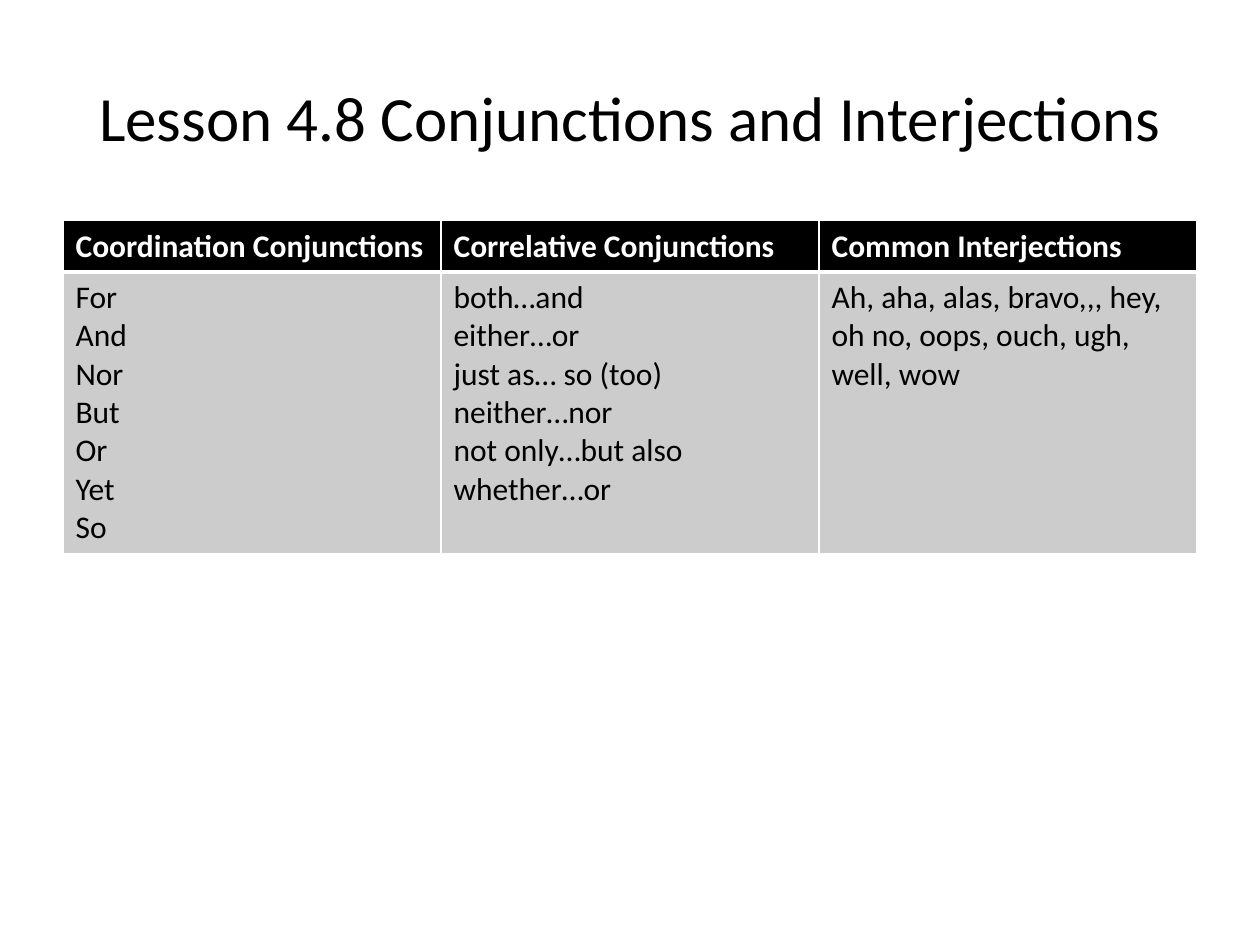
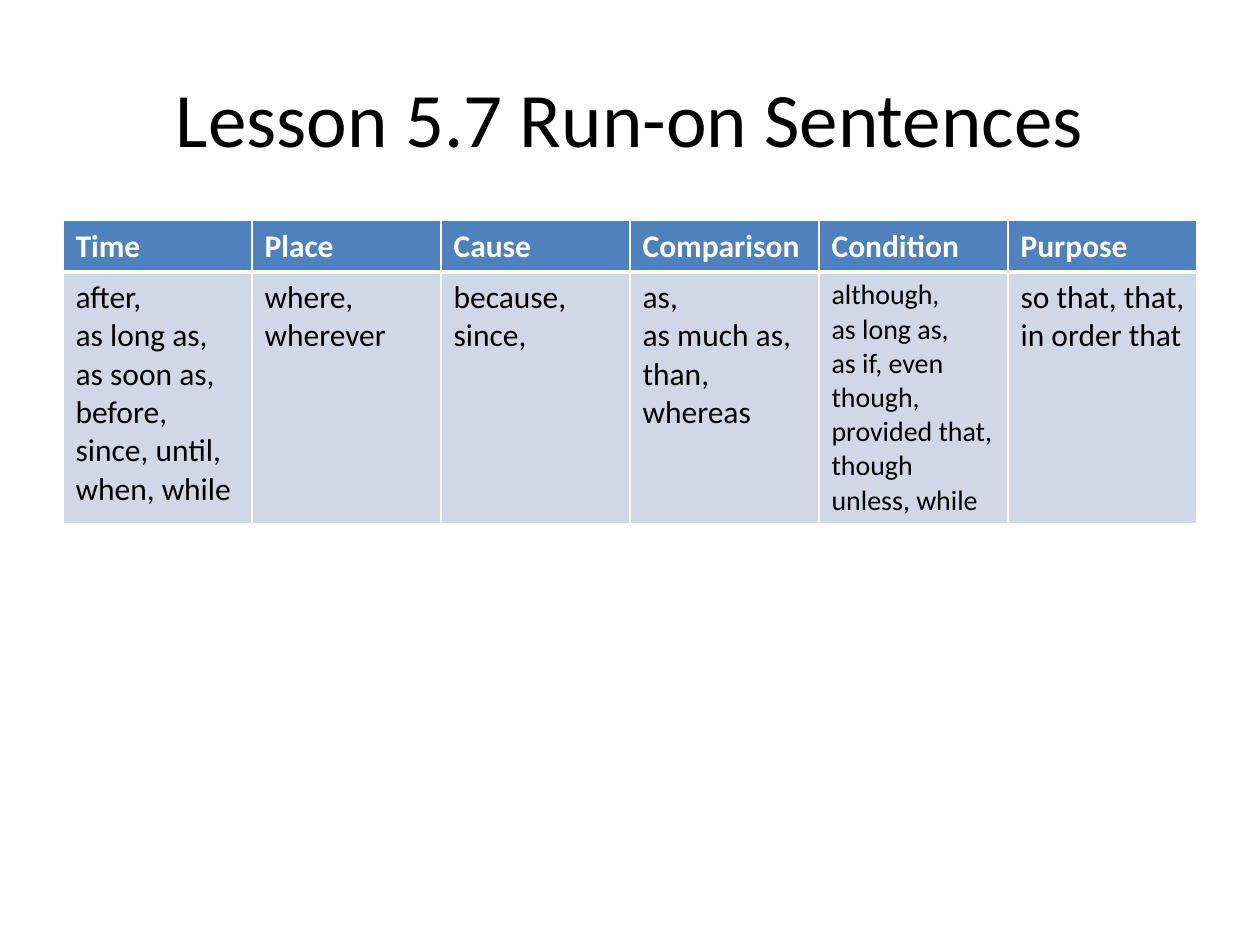
from dataclasses import dataclass

from lxml import etree
from pptx import Presentation
from pptx import util as u
from pptx.dml.color import RGBColor
from pptx.enum import text
from pptx.oxml import ns


@dataclass(frozen=True)
class Theme:
    font: str = "Calibri"
    ink: str = "000000"
    paper: str = "FFFFFF"
    black: str = "000000"
    grey: str = "CCCCCC"
    blue: str = "4F81BD"
    pale_blue: str = "D0D8E8"
    title_size: int = 44
    long_title_size: int = 36
    table_size: int = 18
    small_size: int = 16
    thin_rule: int = 1
    header_rule: int = 3


THEME = Theme()
TITLE_ONLY = 5
LEFT, WIDTH = u.Cm(1.27), u.Cm(22.86)
TITLE_TOP, TITLE_HEIGHT = u.Cm(0.76), u.Cm(3.18)
TABLE_TOP, HEADER_HEIGHT = u.Cm(4.45), u.Cm(1.03)

CONJUNCTIONS = {
    "Coordination Conjunctions": ["For", "And", "Nor", "But", "Or", "Yet", "So"],
    "Correlative Conjunctions": [
        "both…and", "either…or", "just as… so (too)",
        "neither…nor", "not only…but also", "whether…or",
    ],
    "Common Interjections": [
        "Ah, aha, alas, bravo,,, hey, oh no, oops, ouch, ugh, well, wow",
    ],
}
SUBORDINATORS = {
    "Time": ["after,", "as long as, as soon as, before, since, until, when, while"],
    "Place": ["where, wherever"],
    "Cause": ["because, since,"],
    "Comparison": ["as,", "as much as, than, whereas"],
    "Condition": [
        "although,", "as long as,",
        "as if, even though, provided that, though unless, while",
    ],
    "Purpose": ["so that, that,", "in order that"],
}


def add_run(paragraph, words, size, color, bold=False):
    run = paragraph.add_run()
    run.text = words
    run.font.name = THEME.font
    run.font.size = u.Pt(size)
    run.font.bold = bold
    run.font.color.rgb = RGBColor.from_string(color)


def set_borders(cell, top, bottom):
    """Draw white cell borders; top and bottom are widths in points."""
    properties = cell._tc.get_or_add_tcPr()
    widths = {"lnL": THEME.thin_rule, "lnR": THEME.thin_rule, "lnT": top, "lnB": bottom}
    for position, (edge, width) in enumerate(widths.items()):
        line = etree.Element(ns.qn(f"a:{edge}"), w=str(u.Pt(width)))
        fill = etree.SubElement(line, ns.qn("a:solidFill"))
        etree.SubElement(fill, ns.qn("a:srgbClr"), val=THEME.paper)
        properties.insert(position, line)


def fill_cell(cell, lines, fill, size, color, bold=False):
    cell.fill.solid()
    cell.fill.fore_color.rgb = RGBColor.from_string(fill)
    frame = cell.text_frame
    for index, line in enumerate(lines):
        paragraph = frame.add_paragraph() if index else frame.paragraphs[0]
        add_run(paragraph, line, size, color, bold)


def add_titled_slide(presentation, title, size):
    slide = presentation.slides.add_slide(presentation.slide_layouts[TITLE_ONLY])
    shape = slide.shapes.title
    shape.left, shape.top, shape.width, shape.height = LEFT, TITLE_TOP, WIDTH, TITLE_HEIGHT
    frame = shape.text_frame
    frame.auto_size = text.MSO_AUTO_SIZE.NONE
    frame.vertical_anchor = text.MSO_ANCHOR.MIDDLE
    paragraph = frame.paragraphs[0]
    paragraph.alignment = text.PP_ALIGN.CENTER
    add_run(paragraph, title, size, THEME.ink)
    return slide


def add_word_table(slide, columns, header_fill, body_fill, body_height, small=()):
    """Add one column per heading; headings in small get the smaller body type."""
    frame = slide.shapes.add_table(
        2, len(columns), LEFT, TABLE_TOP, WIDTH, HEADER_HEIGHT + body_height)
    table = frame.table
    table.horz_banding = False
    table.rows[0].height = HEADER_HEIGHT
    table.rows[1].height = body_height
    for index, (heading, lines) in enumerate(columns.items()):
        header, body = table.cell(0, index), table.cell(1, index)
        size = THEME.small_size if heading in small else THEME.table_size
        fill_cell(header, [heading], header_fill, THEME.table_size, THEME.paper, bold=True)
        fill_cell(body, lines, body_fill, size, THEME.ink)
        set_borders(header, THEME.thin_rule, THEME.header_rule)
        set_borders(body, THEME.header_rule, THEME.thin_rule)


def main():
    presentation = Presentation()
    presentation.slide_width, presentation.slide_height = u.Cm(25.4), u.Cm(19.05)

    slide = add_titled_slide(
        presentation, "Lesson 4.8 Conjunctions and Interjections", THEME.long_title_size)
    add_word_table(slide, CONJUNCTIONS, THEME.black, THEME.grey, u.Cm(5.6))

    slide = add_titled_slide(presentation, "Lesson 5.7 Run-on Sentences", THEME.title_size)
    add_word_table(
        slide, SUBORDINATORS, THEME.blue, THEME.pale_blue, u.Cm(5), small={"Condition"})

    presentation.save("out.pptx")


if __name__ == "__main__":
    main()
